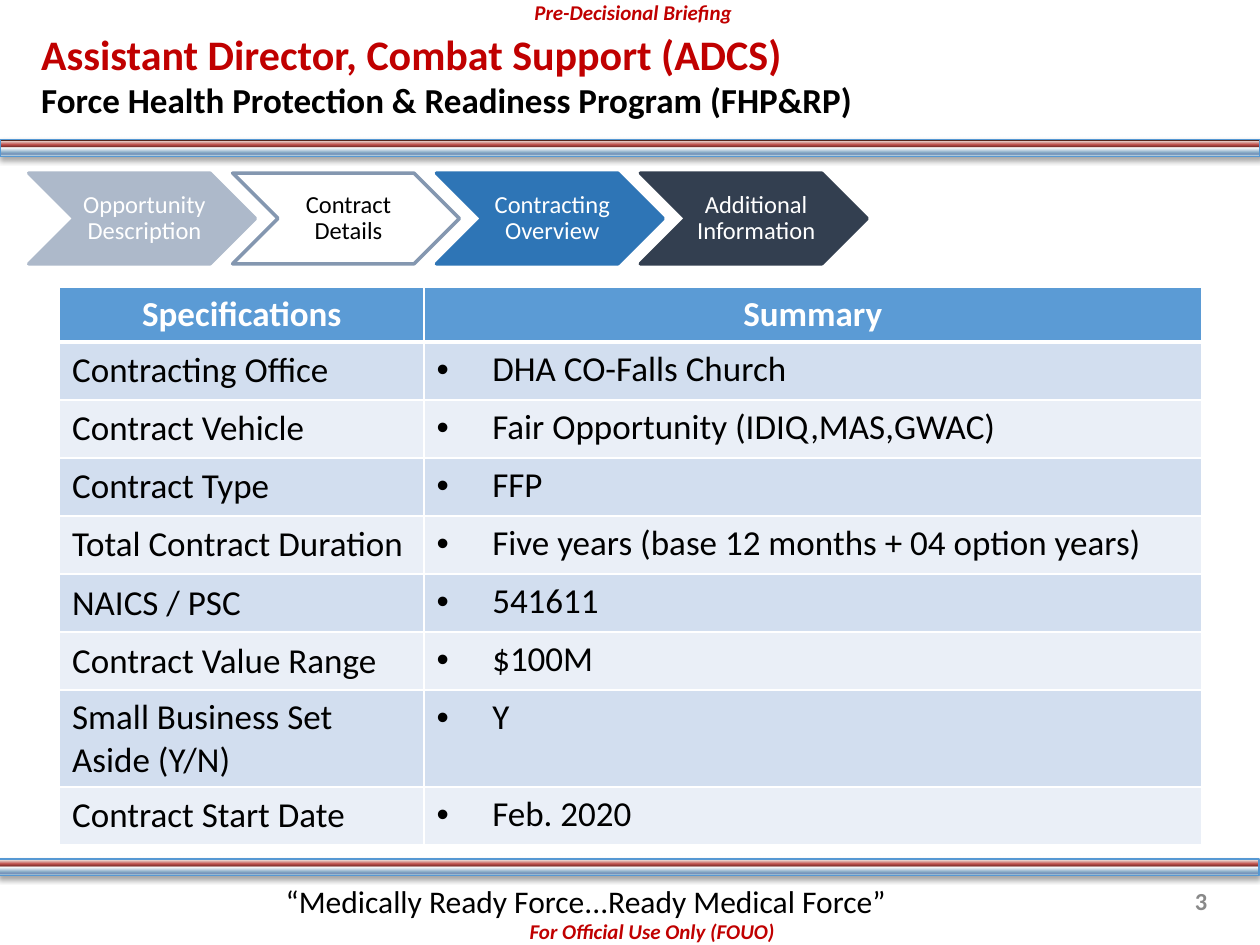
from lxml import etree
from pptx import Presentation
from pptx.dml.color import RGBColor
from pptx.enum.shapes import MSO_SHAPE
from pptx.enum.text import MSO_ANCHOR, PP_ALIGN
from pptx.oxml.ns import qn
from pptx.util import Cm, Pt

LEFT, CENTER, RIGHT = PP_ALIGN.LEFT, PP_ALIGN.CENTER, PP_ALIGN.RIGHT
TOP, MIDDLE = MSO_ANCHOR.TOP, MSO_ANCHOR.MIDDLE
RECTANGLE, CHEVRON = MSO_SHAPE.RECTANGLE, MSO_SHAPE.CHEVRON
FONT = "Calibri"

COLORS = {
    "red": "C00000", "black": "000000", "white": "FFFFFF", "gray": "898989",
    "mist": "ADB9CA", "slate": "8497B0", "blue": "2E75B6", "navy": "333F50",
    "header": "5B9BD5", "odd": "D2DEEF", "even": "EAEFF7", "bar_line": "5698D3",
}
BAR_STOPS = [
    (0, "DCEBF5"), (8, "83A7C3"), (13, "768FB9"), (21, "83A7C3"), (52, "FFFFFF"),
    (56, "9C6563"), (58, "80302D"), (71, "C0524E"), (94, "EBDAD4"), (100, "55261C"),
]
BAR_PLACES = [(0, 2.82), (-0.02, 17.32)]

TITLE_LINES = [
    ("Assistant Director, Combat Support (ADCS)", 24, "red"),
    ("Force Health Protection & Readiness Program (FHP&RP)", 20, "black"),
]
MARKING = {"size": 12, "color": "red", "bold": True, "italic": True}
# text, (left, top, width, height), alignment, anchor, format
LABELS = [
    ("For Official Use Only (FOUO)", (5.38, 18.39, 15.54, 0.77), CENTER, TOP, MARKING),
    ("Pre-Decisional Briefing", (10.29, -0.13, 4.95, 0.77), CENTER, TOP, MARKING),
    ("“Medically Ready Force...Ready Medical Force”", (5.51, 17.65, 14.6, 1.02),
     LEFT, TOP, {"size": 18, "color": "black"}),
    ("3", (22.89, 17.65, 1.7, 1.02), RIGHT, MIDDLE,
     {"size": 14, "color": "gray", "bold": True}),
]
# text, fill, line, text colour
STEPS = [
    ("Opportunity Description", "mist", "mist", "white"),
    ("Contract Details", "white", "slate", "black"),
    ("Contracting Overview", "blue", "blue", "white"),
    ("Additional Information", "navy", "navy", "white"),
]
ROWS = [
    ("Specifications", "Summary"),
    ("Contracting Office", "DHA CO-Falls Church"),
    ("Contract Vehicle", "Fair Opportunity (IDIQ,MAS,GWAC)"),
    ("Contract Type", "FFP"),
    ("Total Contract Duration", "Five years (base 12 months + 04 option years)"),
    ("NAICS / PSC", "541611"),
    ("Contract Value Range", "$100M"),
    ("Small Business Set Aside (Y/N)", "Y"),
    ("Contract Start Date", "Feb. 2020"),
]
COLUMN_WIDTHS = [7.35, 15.67]
ROW_HEIGHTS = [0.86] + [1.17] * 6 + [1.5, 1.17]


def rgb(name):
    return RGBColor.from_string(COLORS[name])


def set_font(font, size, color, **flags):
    font.name, font.size = FONT, Pt(size)
    font.color.rgb = rgb(color)
    for name, value in flags.items():
        setattr(font, name, value)


def set_margins(frame, left, top, right, bottom):
    for side, value in zip(("left", "top", "right", "bottom"), (left, top, right, bottom)):
        setattr(frame, f"margin_{side}", Cm(value))


def add_element(parent, tag, **attributes):
    return etree.SubElement(parent, qn(tag), attributes)


def add_label(page, text, place, align, anchor, style):
    box = page.shapes.add_textbox(*map(Cm, place))
    frame = box.text_frame
    frame.word_wrap = True
    frame.vertical_anchor = anchor
    para = frame.paragraphs[0]
    para.alignment = align
    span = para.add_run()
    span.text = text
    set_font(span.font, **style)
    return frame


def add_bar(page, left, top):
    """Add a full-width striped bar with a soft shadow below it."""
    bar = page.shapes.add_shape(RECTANGLE, Cm(left), Cm(top), Cm(25.4), Cm(0.33))
    bar.fill.gradient()
    bar.fill.gradient_angle = 90
    stops = bar._element.spPr.find(f".//{qn('a:gsLst')}")
    stops.clear()
    for position, color in BAR_STOPS:
        stop = add_element(stops, "a:gs", pos=str(position * 1000))
        add_element(stop, "a:srgbClr", val=color)
    bar.line.color.rgb = rgb("bar_line")
    bar.line.width = Pt(0.75)
    bar.shadow.inherit = False
    effects = bar._element.spPr.find(qn("a:effectLst"))
    shadow = add_element(effects, "a:outerShdw", blurRad=str(Pt(3.1)), dist=str(Pt(1.8)),
                         dir="5400000", rotWithShape="0")
    shade = add_element(shadow, "a:srgbClr", val=COLORS["black"])
    add_element(shade, "a:alpha", val="35000")


def add_title(page):
    title = page.shapes.title
    title.left, title.top, title.width, title.height = map(Cm, (0.58, 0.36, 18.85, 2.29))
    frame = title.text_frame
    frame.word_wrap = True
    frame.vertical_anchor = MIDDLE
    set_margins(frame, 0.25, 0, 0.25, 0)
    para = frame.paragraphs[0]
    para.alignment = LEFT
    for number, (text, size, color) in enumerate(TITLE_LINES):
        if number:
            para.add_line_break()
        span = para.add_run()
        span.text = text
        set_font(span.font, size, color, bold=True)


def add_steps(page):
    left, top, pitch, width, height, inset = 0.58, 3.49, 4.11, 4.57, 1.83, 0.91
    for number, (text, fill, line, color) in enumerate(STEPS):
        x = left + number * pitch
        step = page.shapes.add_shape(CHEVRON, Cm(x), Cm(top), Cm(width), Cm(height))
        step.shadow.inherit = False
        step.fill.solid()
        step.fill.fore_color.rgb = rgb(fill)
        step.line.color.rgb = rgb(line)
        step.line.width = Pt(2)
        place = (x + inset, top, width - 2 * inset, height)
        frame = add_label(page, text, place, CENTER, MIDDLE, {"size": 14, "color": color})
        set_margins(frame, 0.15, 0.05, 0.05, 0.05)
        frame.paragraphs[0].line_spacing = 0.9


def set_borders(cell, top, bottom):
    properties = cell._tc.get_or_add_tcPr()
    widths = {"a:lnL": 1, "a:lnR": 1, "a:lnT": top, "a:lnB": bottom}
    for index, (tag, width) in enumerate(widths.items()):
        border = etree.Element(qn(tag), w=str(Pt(width)))
        add_element(add_element(border, "a:solidFill"), "a:srgbClr", val=COLORS["white"])
        properties.insert(index, border)


def add_bullet(para):
    properties = para._p.get_or_add_pPr()
    properties.set("marL", str(Cm(1.12)))
    properties.set("indent", str(-Cm(1.12)))
    add_element(properties, "a:buFont", typeface="Arial")
    add_element(properties, "a:buChar", char="•")


def add_specifications(page):
    frame = page.shapes.add_table(len(ROWS), len(COLUMN_WIDTHS), Cm(1.2), Cm(5.79),
                                  Cm(sum(COLUMN_WIDTHS)), Cm(sum(ROW_HEIGHTS)))
    table = frame.table
    for column, width in zip(table.columns, COLUMN_WIDTHS):
        column.width = Cm(width)
    for row, height in zip(table.rows, ROW_HEIGHTS):
        row.height = Cm(height)
    for r, texts in enumerate(ROWS):
        header = r == 0
        fill = "header" if header else ("even", "odd")[r % 2]
        for c, text in enumerate(texts):
            bulleted = c == 1 and not header
            cell = table.cell(r, c)
            cell.fill.solid()
            cell.fill.fore_color.rgb = rgb(fill)
            set_borders(cell, 3 if r == 1 else 1, 3 if header else 1)
            cell.vertical_anchor = TOP if bulleted else MIDDLE
            para = cell.text_frame.paragraphs[0]
            para.alignment = CENTER if header else LEFT
            if bulleted:
                add_bullet(para)
            span = para.add_run()
            span.text = text
            set_font(span.font, 20, "white" if header else "black", bold=header)


def main():
    deck = Presentation()
    deck.slide_width, deck.slide_height = Cm(25.4), Cm(19.05)
    page = deck.slides.add_slide(deck.slide_layouts[5])
    for place in BAR_PLACES:
        add_bar(page, *place)
    add_title(page)
    add_steps(page)
    add_specifications(page)
    for label in LABELS:
        add_label(page, *label)
    deck.save("out.pptx")


if __name__ == "__main__":
    main()
